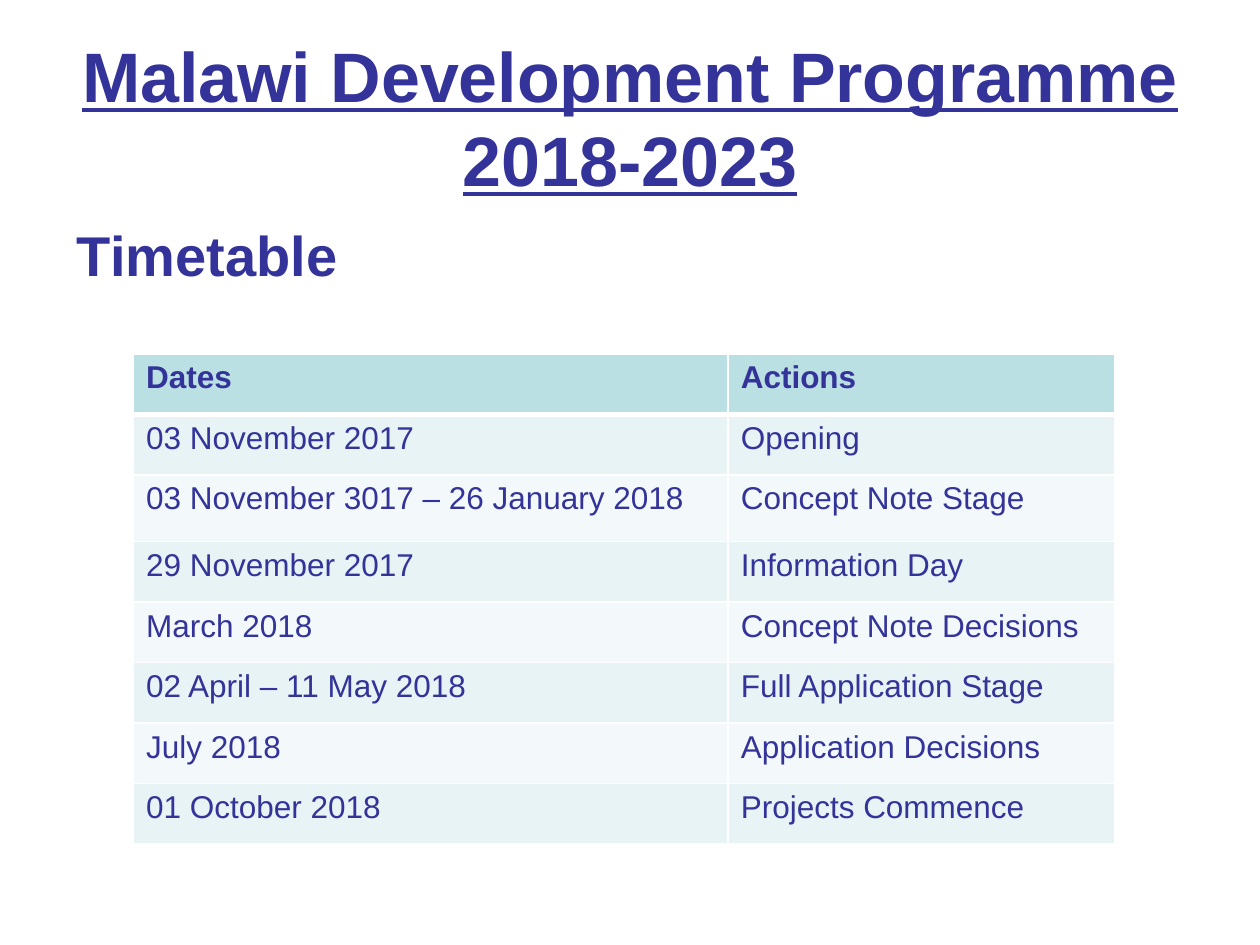
from lxml.etree import SubElement
from pptx import Presentation
from pptx.dml.color import RGBColor
from pptx.enum.text import MSO_ANCHOR as Anchor, MSO_AUTO_SIZE as AutoSize, PP_ALIGN as Align
from pptx.oxml.ns import qn
from pptx.util import Inches, Pt

COLORS = {"text": "333399", "header": "BBE0E3", "odd": "E7F3F4", "even": "F3F9FA", "border": "FFFFFF"}
FONT = "Arial"
TIMETABLE = [
    ("Dates", "Actions"),
    ("03 November 2017", "Opening"),
    ("03 November 3017 – 26 January 2018", "Concept Note Stage"),
    ("29 November 2017", "Information Day"),
    ("March 2018", "Concept Note Decisions"),
    ("02 April – 11 May 2018", "Full Application Stage"),
    ("July 2018", "Application Decisions"),
    ("01 October 2018", "Projects Commence"),
]


def write(frame, text, size, bold=False, underline=False):
    """Fill a text frame with one styled paragraph and return the paragraph."""
    frame.text = text
    paragraph = frame.paragraphs[0]
    font = paragraph.runs[0].font
    font.name, font.size, font.bold = FONT, Pt(size), bold
    font.underline = underline
    font.color.rgb = RGBColor.from_string(COLORS["text"])
    return paragraph


def place(placeholder, box, anchor):
    """Move a placeholder to a box and fix its anchor and sizing."""
    placeholder.left, placeholder.top, placeholder.width, placeholder.height = map(Inches, box)
    frame = placeholder.text_frame
    frame.word_wrap = True
    frame.auto_size = AutoSize.NONE
    frame.vertical_anchor = anchor
    return frame


def add_title(slide, box):
    """Write the programme title in the title placeholder."""
    frame = place(slide.shapes.title, box, Anchor.MIDDLE)
    heading = write(frame, "Malawi Development Programme 2018-2023", 40, True, True)
    heading.alignment = Align.CENTER


def add_subtitle(slide, box):
    """Write the unbulleted section heading in the body placeholder."""
    frame = place(slide.placeholders[1], box, Anchor.TOP)
    section = write(frame, "Timetable", 32, True)
    section.alignment = Align.LEFT
    section.space_before = Pt(6.4)
    properties = section._p.get_or_add_pPr()
    properties.set("marL", "0")
    properties.set("indent", "0")
    SubElement(properties, qn("a:buNone"))


def add_borders(cell, bottom_width):
    """Draw the four borders of a table cell."""
    properties = cell._tc.get_or_add_tcPr()
    for side, width in (("L", 1), ("R", 1), ("T", 1), ("B", bottom_width)):
        line = SubElement(properties, qn(f"a:ln{side}"), w=str(Pt(width)))
        fill = SubElement(line, qn("a:solidFill"))
        SubElement(fill, qn("a:srgbClr"), val=COLORS["border"])


def add_timetable(slide, box):
    """Build the table of dates and actions with banded rows."""
    table = slide.shapes.add_table(len(TIMETABLE), 2, *map(Inches, box)).table
    dates_width = 4.72
    for column, width in zip(table.columns, (dates_width, box[2] - dates_width)):
        column.width = Inches(width)
    for index, entry in enumerate(TIMETABLE):
        is_header = index == 0
        band = "header" if is_header else "odd" if index % 2 else "even"
        table.rows[index].height = Inches(0.53 if index == 2 else 0.48)
        for cell, text in zip(table.rows[index].cells, entry):
            write(cell.text_frame, text, 18, is_header)
            add_borders(cell, 3 if index == 0 else 1)
            cell.fill.solid()
            cell.fill.fore_color.rgb = RGBColor.from_string(COLORS[band])


def main():
    """Build and save the timetable slide."""
    deck = Presentation()
    deck.slide_width, deck.slide_height = Inches(10), Inches(7.5)
    slide = deck.slides.add_slide(deck.slide_layouts[1])
    add_title(slide, (0.5, 0.3, 9, 1.25))
    add_subtitle(slide, (0.51, 1.7, 8.98, 4.72))
    add_timetable(slide, (1.06, 2.81, 7.79, 3.89))
    deck.save("out.pptx")


if __name__ == "__main__":
    main()
